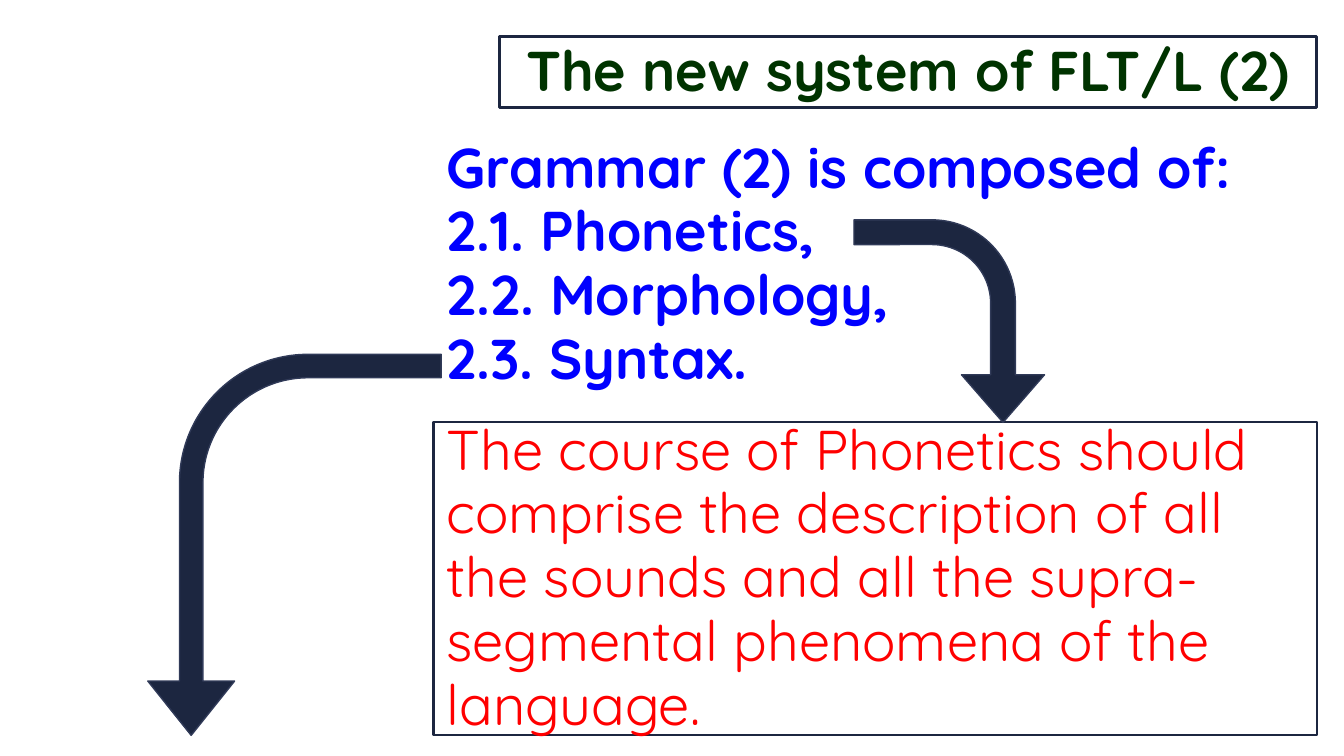
from dataclasses import dataclass

from pptx import Presentation
from pptx.dml.color import RGBColor
from pptx.enum.shapes import MSO_SHAPE
from pptx.enum.text import MSO_ANCHOR, MSO_AUTO_SIZE, PP_ALIGN
from pptx.oxml.ns import qn
from pptx.util import Emu, Pt

PX = 9144  # 100 px to the inch
FONT = "Quicksand"
FONT_SIZE = 40
TITLE_ONLY = 5
RECTANGLE = MSO_SHAPE.RECTANGLE
BENT_ARROW = MSO_SHAPE.BENT_ARROW
MIDDLE = MSO_ANCHOR.MIDDLE
NO_FIT = MSO_AUTO_SIZE.NONE
LEFT, CENTER = PP_ALIGN.LEFT, PP_ALIGN.CENTER

COLORS = {
    "navy": "1C2640",
    "slate": "303A58",
    "blue": "0000FF",
    "red": "FF0000",
    "green": "003300",
}


@dataclass(frozen=True)
class Frame:
    left: int
    top: int
    width: int
    height: int

    def emu(self) -> tuple[Emu, Emu, Emu, Emu]:
        return (Emu(self.left * PX), Emu(self.top * PX),
                Emu(self.width * PX), Emu(self.height * PX))


@dataclass(frozen=True)
class TextStyle:
    color: str
    bold: bool
    align: PP_ALIGN = LEFT


@dataclass(frozen=True)
class BentArrow:
    frame: Frame
    flips: tuple[str, ...]
    adjustments: tuple[float, ...]


HEADING = Frame(495, 36, 811, 71)
GRAMMAR_LIST = Frame(430, 135, 874, 255)
PHONETICS_BOX = Frame(430, 419, 876, 310)

ARROWS = (
    BentArrow(Frame(841, 224, 201, 189), ("flipH", "flipV"), (0.13, 0.218, 0.25, 0.438)),
    BentArrow(Frame(103, 395, 378, 291), ("flipH",), (0.08, 0.148, 0.185, 0.438)),
)


def color(name: str) -> RGBColor:
    return RGBColor.from_string(COLORS[name])


def outline(shape, name: str, width: float) -> None:
    shape.line.color.rgb = color(name)
    shape.line.width = Pt(width)


def write(shape, lines: list[str], style: TextStyle) -> None:
    text = shape.text_frame
    text.word_wrap = True
    text.auto_size = NO_FIT
    text.vertical_anchor = MIDDLE
    text.margin_left = text.margin_right = Emu(13 * PX)
    text.margin_top = text.margin_bottom = Emu(7 * PX)
    for index, line in enumerate(lines):
        para = text.add_paragraph() if index else text.paragraphs[0]
        para.alignment = style.align
        para.line_spacing = 0.95
        span = para.add_run()
        span.text = line
        span.font.name = FONT
        span.font.size = Pt(FONT_SIZE)
        span.font.bold = style.bold
        span.font.color.rgb = color(style.color)


def draw_arrow(page, arrow: BentArrow) -> None:
    shape = page.shapes.add_shape(BENT_ARROW, *arrow.frame.emu())
    shape.shadow.inherit = False
    for index, value in enumerate(arrow.adjustments):
        shape.adjustments[index] = value
    shape.rotation = 270
    transform = shape.element.spPr.find(qn("a:xfrm"))
    for flip in arrow.flips:
        transform.set(flip, "1")
    shape.fill.solid()
    shape.fill.fore_color.rgb = color("navy")
    outline(shape, "slate", 1)


def main() -> None:
    deck = Presentation()
    deck.slide_width, deck.slide_height = Emu(1333 * PX), Emu(750 * PX)
    page = deck.slides.add_slide(deck.slide_layouts[TITLE_ONLY])

    # Heading
    heading = page.shapes.title
    heading.left, heading.top, heading.width, heading.height = HEADING.emu()
    outline(heading, "navy", 2.25)
    write(heading, ["The new system of FLT/L (2)"], TextStyle("green", True, CENTER))

    # Parts of grammar
    grammar = page.shapes.add_textbox(*GRAMMAR_LIST.emu())
    write(grammar, [
        "Grammar (2) is composed of:",
        "2.1. Phonetics,",
        "2.2. Morphology,",
        "2.3. Syntax.",
    ], TextStyle("blue", True))

    # Phonetics course
    phonetics = page.shapes.add_shape(RECTANGLE, *PHONETICS_BOX.emu())
    phonetics.shadow.inherit = False
    phonetics.fill.background()
    outline(phonetics, "navy", 1.5)
    write(phonetics, [
        "The course of Phonetics should comprise the description of all the sounds "
        "and all the supra-segmental phenomena of the language.",
    ], TextStyle("red", False))

    # Arrows from the list
    for arrow in ARROWS:
        draw_arrow(page, arrow)

    deck.save("out.pptx")


if __name__ == "__main__":
    main()
